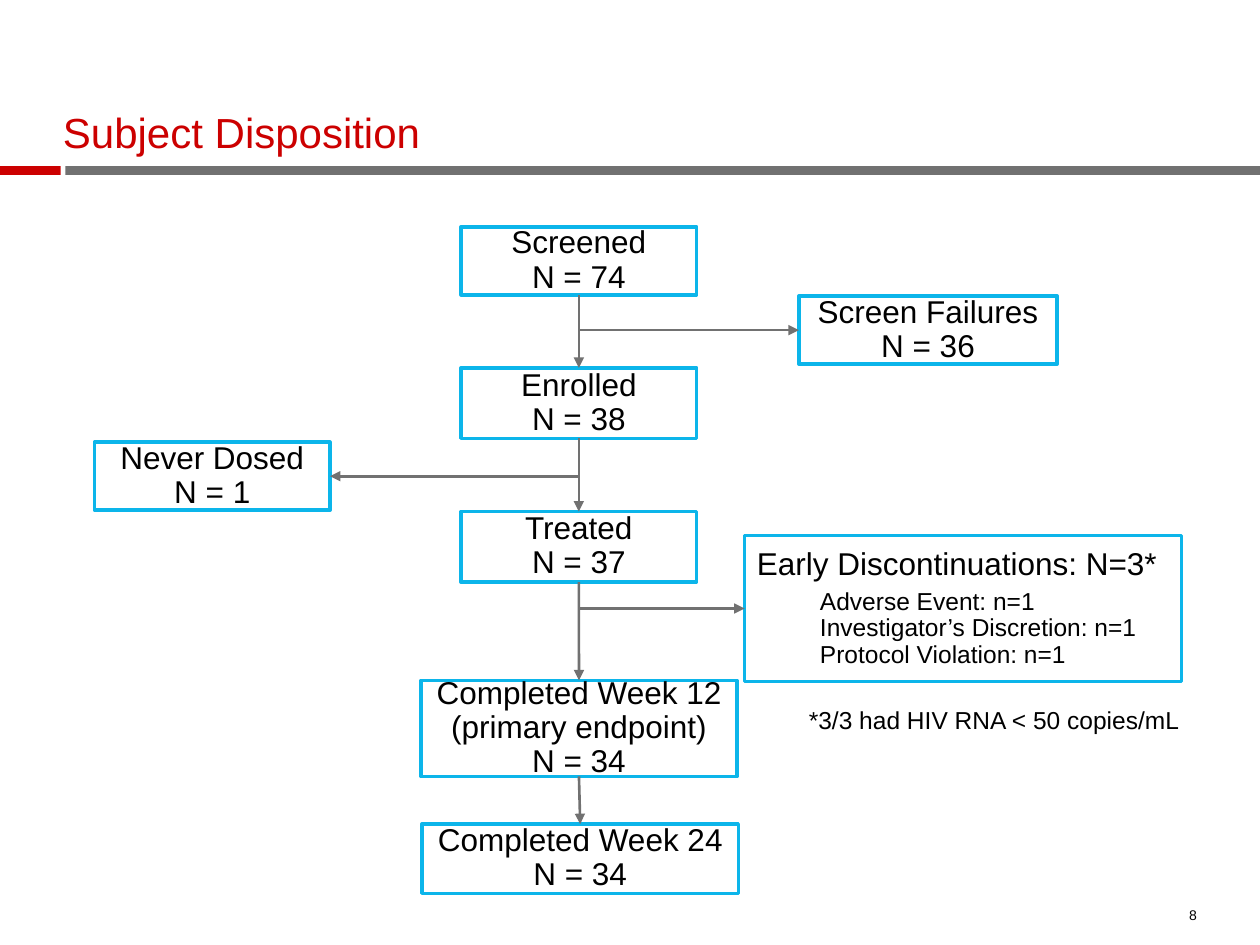
import pptx
import pptx.util
import pptx.dml.color
import pptx.enum.shapes
import pptx.enum.text
import pptx.oxml.ns
from lxml import etree

Pt = pptx.util.Pt
ALIGN = pptx.enum.text.PP_ALIGN
ANCHOR = pptx.enum.text.MSO_ANCHOR
RECT = pptx.enum.shapes.MSO_SHAPE.RECTANGLE
LINE = pptx.enum.shapes.MSO_CONNECTOR.STRAIGHT

COLORS = {"red": "CC0000", "gray": "717171", "blue": "0CB5EA",
          "white": "FFFFFF", "black": "000000"}

# key: (left, top, width, height), lines of text
STEPS = {
    "screened": ((263.5, 129.6, 134.6, 38.9), ["Screened", "N = 74"]),
    "enrolled": ((263.5, 210.2, 134.6, 40.3), ["Enrolled", "N = 38"]),
    "treated": ((263.5, 292.3, 134.6, 40.3), ["Treated", "N = 37"]),
    "week12": ((240.5, 388.8, 180.7, 54.9),
               ["Completed Week 12", "(primary endpoint)", "N = 34"]),
    "week24": ((241.2, 470.9, 180.7, 39.6), ["Completed Week 24", "N = 34"]),
}
EXITS = {
    "failures": ((456.5, 169.2, 147.6, 38.9), ["Screen Failures", "N = 36"]),
    "undosed": ((54, 252.7, 134.6, 38.9), ["Never Dosed", "N = 1"]),
}
EARLY = (425.5, 306, 249.8, 83.5)
EARLY_HEAD = "Early Discontinuations: N=3*"
REASONS = ["Adverse Event: n=1", "Investigator’s Discretion: n=1",
           "Protocol Violation: n=1"]
SIDES = [("failures", 1), ("undosed", 3), ("early", 1)]  # box, joined side

# text, place, size, color, align, anchor, line spacing
LABELS = [
    ("Subject Disposition", (36, 36.7, 648, 53.3), 24, "red",
     ALIGN.LEFT, ANCHOR.BOTTOM, 0.9),
    ("*3/3 had HIV RNA < 50 copies/mL", (462.2, 404.6, 249, 15.1), 14, "black",
     ALIGN.LEFT, ANCHOR.TOP, 0.9),
    ("8", (664.6, 514.8, 19.4, 13), 8, "black",
     ALIGN.RIGHT, ANCHOR.BOTTOM, 1.0),
]
BARS = [((37.4, 95, 682.6, 5), "gray"), ((0, 95, 34.6, 5), "red")]


def rgb(name):
    return pptx.dml.color.RGBColor.from_string(COLORS[name])


def write(frame, rows, align, spacing=0.9, color="black"):
    """Fill a frame with (text, size) rows, one paragraph each."""
    for i, (text, size) in enumerate(rows):
        para = frame.add_paragraph() if i else frame.paragraphs[0]
        para.alignment = align
        para.line_spacing = spacing
        run = para.add_run()
        run.text = text
        run.font.name = "Arial"
        run.font.size = Pt(size)
        run.font.color.rgb = rgb(color)


def add_rect(slide, place, fill):
    shape = slide.shapes.add_shape(RECT, *map(Pt, place))
    shape.shadow.inherit = False
    shape.fill.solid()
    shape.fill.fore_color.rgb = rgb(fill)
    shape.line.fill.background()
    return shape


def add_box(slide, place, rows, align=ALIGN.CENTER):
    box = add_rect(slide, place, "white")
    box.line.color.rgb = rgb("blue")
    box.line.width = Pt(2)
    box.text_frame.word_wrap = True
    box.text_frame.vertical_anchor = ANCHOR.MIDDLE
    write(box.text_frame, rows, align)
    return box


def add_label(slide, text, place, size, color, align, anchor, spacing):
    frame = slide.shapes.add_textbox(*map(Pt, place)).text_frame
    frame.word_wrap = True
    frame.vertical_anchor = anchor
    frame.margin_left = frame.margin_right = 0
    frame.margin_top = frame.margin_bottom = 0
    write(frame, [(text, size)], align, spacing, color)


def add_arrow(slide, x, y, end, side):
    """Draw an arrow from a point to the middle of a box side."""
    arrow = slide.shapes.add_connector(LINE, x, y, x, y)
    arrow.end_connect(end, side)
    arrow.line.color.rgb = rgb("gray")
    arrow.line.width = Pt(1.5)
    qn = pptx.oxml.ns.qn
    etree.SubElement(arrow.line._get_or_add_ln(), qn("a:tailEnd"), type="triangle")
    etree.SubElement(arrow._element.spPr, qn("a:effectLst"))
    return arrow


def main():
    deck = pptx.Presentation()
    deck.slide_width, deck.slide_height = Pt(720), Pt(540)
    slide = deck.slides.add_slide(deck.slide_layouts[6])

    for place, fill in BARS:
        add_rect(slide, place, fill)
    for label in LABELS:
        add_label(slide, *label)

    boxes = {}
    for key, (place, lines) in {**STEPS, **EXITS}.items():
        boxes[key] = add_box(slide, place, [(line, 18) for line in lines])

    rows = [(EARLY_HEAD, 18)] + [(text, 14) for text in REASONS]
    boxes["early"] = add_box(slide, EARLY, rows, ALIGN.LEFT)
    reasons = boxes["early"].text_frame.paragraphs[1:]
    reasons[0].space_before = Pt(4)
    for para in reasons:
        props = para._p.get_or_add_pPr()
        props.set("marL", str(Pt(36)))
        props.set("indent", "0")

    chain = [boxes[key] for key in STEPS]
    spine = chain[0].left + chain[0].width // 2
    for start, end in zip(chain, chain[1:]):
        arrow = add_arrow(slide, spine, start.top + start.height, end, 0)
        arrow.begin_connect(start, 2)
    for key, side in SIDES:
        box = boxes[key]
        add_arrow(slide, spine, box.top + box.height // 2, box, side)

    deck.save("out.pptx")


if __name__ == "__main__":
    main()
